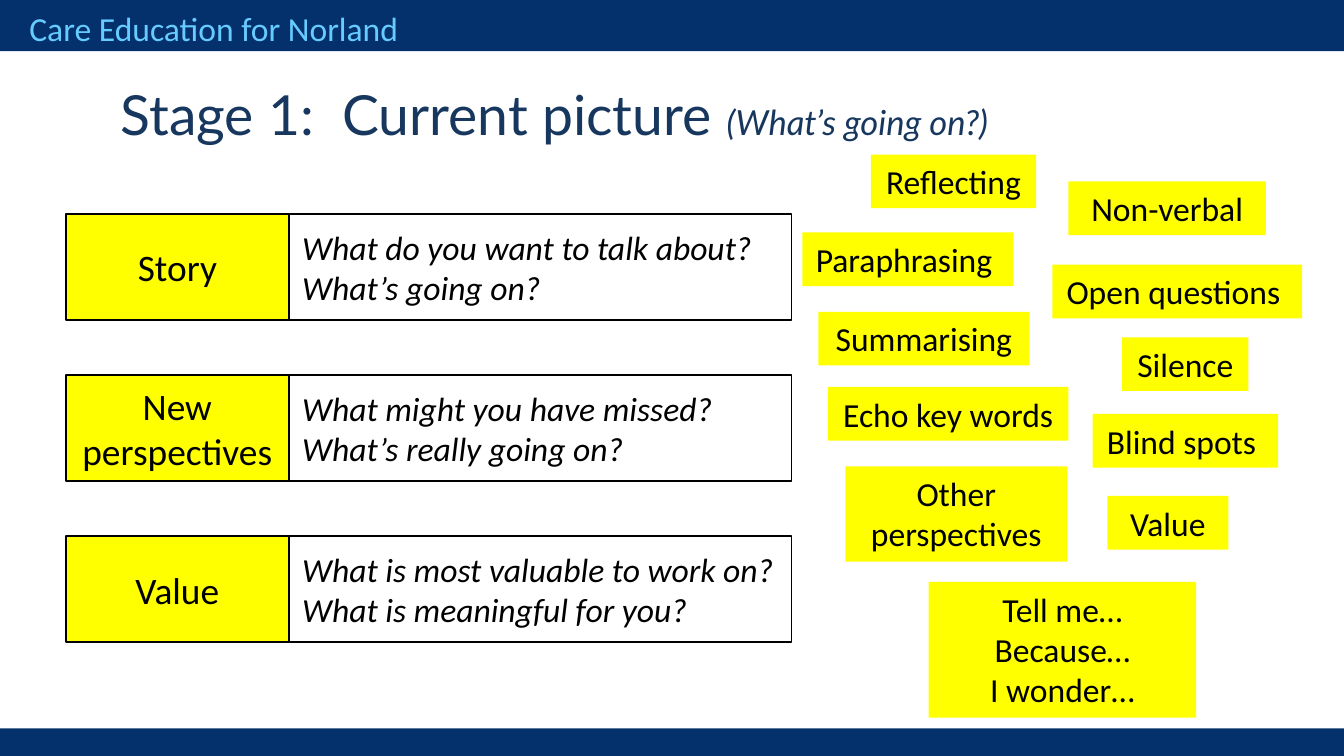
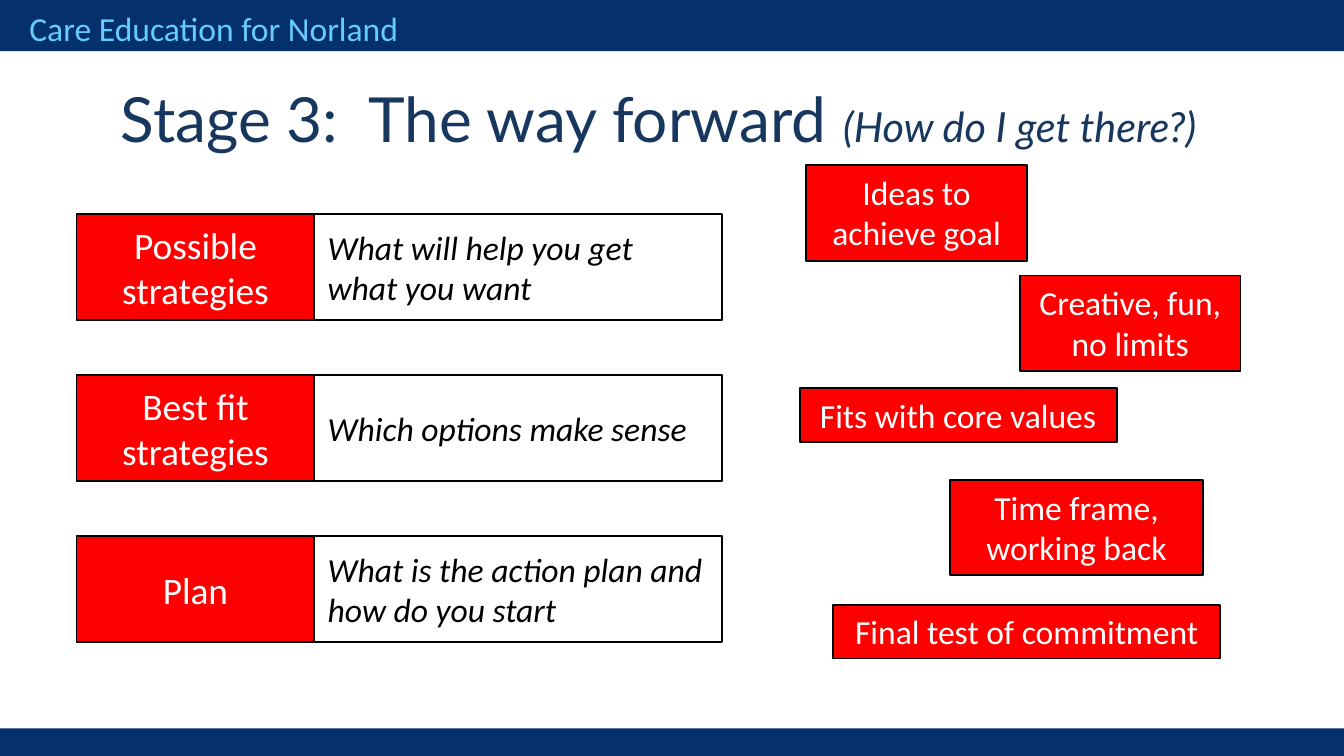
from dataclasses import dataclass
from typing import NamedTuple, Optional

from pptx import Presentation
from pptx import util as u
from pptx.dml import color
from pptx.enum import shapes, text

PX = 9144  # EMU per px, 100 px to the inch
WIDE = 1000


@dataclass(frozen=True)
class Theme:
    navy: str = "04306C"
    sky: str = "66CCFF"
    ink: str = "17375E"
    black: str = "000000"
    white: str = "FFFFFF"
    yellow: str = "FFFF00"
    red: str = "FF0000"
    body: str = "Calibri"
    head: str = "Lato"
    small: float = 18
    label: float = 20
    line: float = 1


class Box(NamedTuple):
    x: int
    y: int
    w: int
    h: int


class Run(NamedTuple):
    words: str
    size: float
    tint: str
    font: str
    slant: bool = False


class Tag(NamedTuple):
    words: str
    box: Box


class Row(NamedTuple):
    label: str
    prompt: str


@dataclass(frozen=True)
class Stage:
    title: str
    aside: str
    sizes: tuple[float, float]
    fill: str
    tint: str
    edge: Optional[str]  # outline of the tags
    left: int
    split: int
    right: int
    rows: list[Row]
    tags: list[Tag]


T = Theme()
BRAND = "Care Education for Norland"
TOP, STEP, TALL = 159, 120, 79  # row grid
LINE = 40  # height of a one-line tag

STAGES = [
    Stage(
        "Stage 1:  Current picture ", "(What’s going on?)", (29.6, 18.5),
        T.yellow, T.black, None, 49, 215, 589,
        [
            Row("Story", "What do you want to talk about?\nWhat’s going on?"),
            Row("New perspectives",
                "What might you have missed?\nWhat’s really going on?"),
            Row("Value", "What is most valuable to work on? "
                "What is meaningful for you?"),
        ],
        [
            Tag("Non-verbal", Box(795, 135, 147, LINE)),
            Tag("Reflecting", Box(648, 115, 123, LINE)),
            Tag("Paraphrasing ", Box(597, 173, 157, LINE)),
            Tag("Summarising", Box(609, 232, 157, LINE)),
            Tag("Echo key words", Box(616, 288, 179, LINE)),
            Tag("Silence", Box(835, 251, 94, LINE)),
            Tag("Blind spots ", Box(813, 308, 138, LINE)),
            Tag("Other perspectives", Box(629, 347, 165, 71)),
            Tag("Value", Box(824, 369, 90, LINE)),
            Tag("Open questions ", Box(783, 197, 186, LINE)),
            Tag("Tell me…\nBecause…\nI wonder…", Box(691, 433, 199, 101)),
        ],
    ),
    Stage(
        "Stage 3:  The way forward ", "(How do I get there?)", (33.3, 22.2),
        T.red, T.white, T.black, 57, 234, 537,
        [
            Row("Possible strategies", "What will help you get what you want"),
            Row("Best fit strategies", "Which options make sense"),
            Row("Plan", "What is the action plan and how do you start"),
        ],
        [
            Tag("Ideas to achieve goal", Box(600, 123, 164, 71)),
            Tag("Creative, fun, no limits", Box(759, 205, 164, 71)),
            Tag("Time frame, working back", Box(707, 357, 188, 71)),
            Tag("Final test of commitment", Box(620, 450, 288, LINE)),
            Tag("Fits with core values", Box(595, 289, 236, LINE)),
        ],
    ),
]


def rgb(tint: str) -> color.RGBColor:
    return color.RGBColor.from_string(tint)


def emu(box: Box) -> list[u.Emu]:
    return [u.Emu(side * PX) for side in box]


def write(shape, runs: list[Run], mid: bool = False, wrap: bool = True,
          anchor=text.MSO_ANCHOR.TOP) -> None:
    """Fill a shape with runs; a line feed starts a new paragraph."""
    frame = shape.text_frame
    frame.word_wrap = wrap
    frame.vertical_anchor = anchor
    para = frame.paragraphs[0]
    side = text.PP_ALIGN.CENTER if mid else text.PP_ALIGN.LEFT
    para.alignment = side
    for item in runs:
        for i, words in enumerate(item.words.split("\n")):
            if i:
                para = frame.add_paragraph()
                para.alignment = side
            run = para.add_run()
            run.text = words
            run.font.size = u.Pt(item.size)
            run.font.name = item.font
            run.font.italic = item.slant
            run.font.color.rgb = rgb(item.tint)


def block(slide, box: Box, fill: Optional[str] = None,
          edge: Optional[str] = None):
    shape = slide.shapes.add_shape(shapes.MSO_SHAPE.RECTANGLE, *emu(box))
    shape.shadow.inherit = False
    if fill:
        shape.fill.solid()
        shape.fill.fore_color.rgb = rgb(fill)
    else:
        shape.fill.background()
    if edge:
        shape.line.color.rgb = rgb(edge)
        shape.line.width = u.Pt(T.line)
    else:
        shape.line.fill.background()
    return shape


def note(slide, box: Box, runs: list[Run]) -> None:
    write(slide.shapes.add_textbox(*emu(box)), runs)


def bands(slide) -> None:
    """Bands and name that every slide shares."""
    block(slide, Box(0, 0, WIDE, 38), T.navy)
    block(slide, Box(0, 542, WIDE, 21), T.navy)
    note(slide, Box(12, 1, 425, 40), [Run(BRAND, T.small, T.sky, T.body)])


def draw(slide, stage: Stage) -> None:
    bands(slide)

    # Skill tags
    for tag in stage.tags:
        shape = block(slide, tag.box, stage.fill, stage.edge)
        write(shape, [Run(tag.words, T.small, stage.tint, T.body)],
              mid=True, wrap=tag.box.h > LINE)

    # Title
    big, less = stage.sizes
    note(slide, Box(80, 55, 840, 57),
         [Run(stage.title, big, T.ink, T.head),
          Run(stage.aside, less, T.ink, T.head, True)])

    # Labels with their prompts
    centre = text.MSO_ANCHOR.MIDDLE
    for i, row in enumerate(stage.rows):
        y = TOP + i * STEP
        name = block(slide, Box(stage.left, y, stage.split - stage.left, TALL),
                     stage.fill, T.black)
        write(name, [Run(row.label, T.label, stage.tint, T.body)],
              mid=True, anchor=centre)
        ask = block(slide, Box(stage.split, y, stage.right - stage.split, TALL),
                    edge=T.black)
        write(ask, [Run(row.prompt, T.small, T.black, T.body, True)],
              anchor=centre)


def main() -> None:
    deck = Presentation()
    deck.slide_width = u.Emu(WIDE * PX)
    deck.slide_height = u.Emu(WIDE * PX * 9 // 16)
    for stage in STAGES:
        draw(deck.slides.add_slide(deck.slide_layouts[6]), stage)
    deck.save("out.pptx")


if __name__ == "__main__":
    main()
